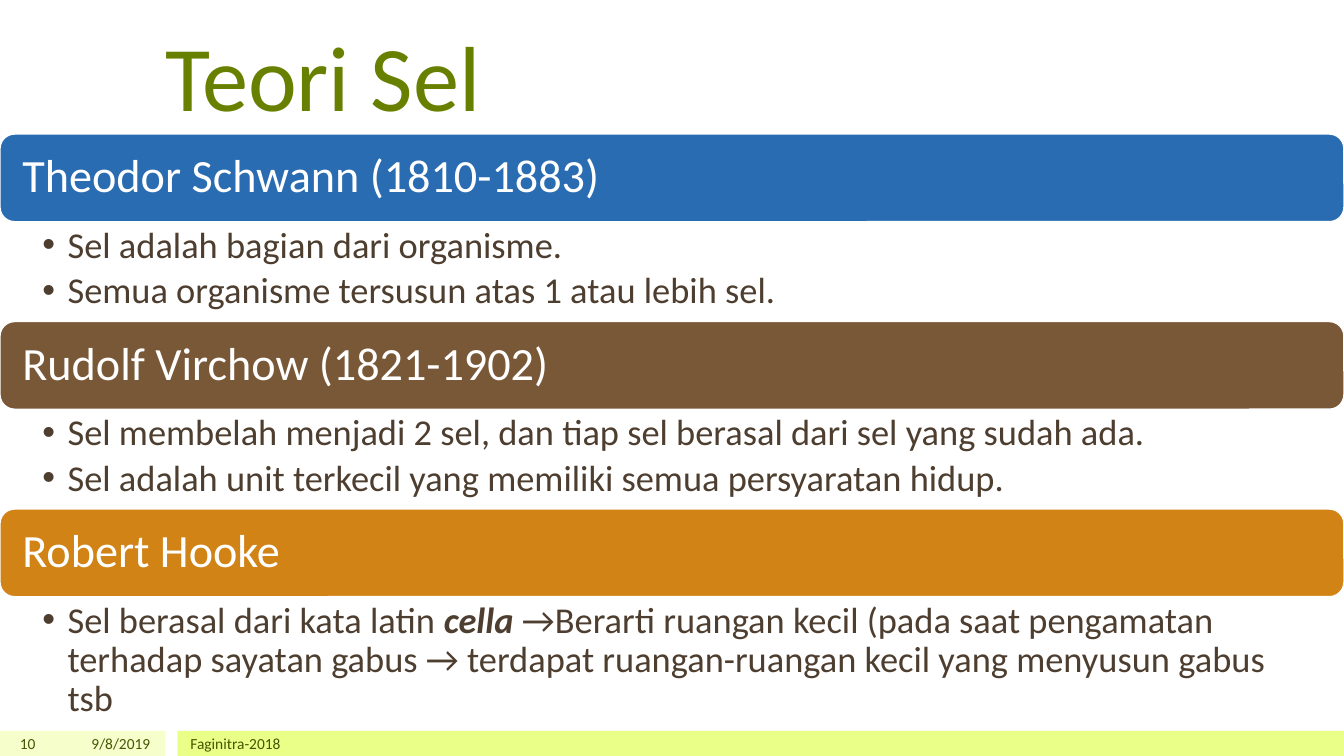
"""Build the cell theory slide with three scientists and their statements."""
from lxml.etree import SubElement
from pptx import Presentation
from pptx.dml.color import RGBColor
from pptx.enum.shapes import MSO_SHAPE
from pptx.enum.text import MSO_ANCHOR, MSO_AUTO_SIZE, PP_ALIGN
from pptx.oxml.ns import qn
from pptx.util import Inches, Pt

SCIENTISTS = [
    ("Theodor Schwann (1810-1883)", "2A6CB2", 0.99, [
        ["Sel adalah bagian dari organisme."],
        ["Semua organisme tersusun atas 1 atau lebih sel."],
    ]),
    ("Rudolf Virchow (1821-1902)", "795837", 0.99, [
        ["Sel membelah menjadi 2 sel, dan tiap sel berasal dari sel yang sudah ada."],
        ["Sel adalah unit terkecil yang memiliki semua persyaratan hidup."],
    ]),
    ("Robert Hooke", "D18316", 1.31, [
        ["Sel berasal dari kata latin ", "cella ",
         "→Berarti ruangan kecil (pada saat pengamatan terhadap sayatan gabus "
         "→ terdapat ruangan-ruangan kecil yang menyusun gabus tsb"],
    ]),
]
FOOTER_BARS = [(0, 1.64, "F6FFCC"), (1.76, 11.57, "E9FF88")]
FOOTER_TEXTS = [
    ("9/8/2019", 0.5, 1.09, PP_ALIGN.RIGHT),
    ("Faginitra-2018", 1.79, 10, PP_ALIGN.LEFT),
    ("10", 0, 0.45, PP_ALIGN.RIGHT),
]
SLIDE_WIDTH = 13.33
HEADER_HEIGHT = 0.87
FOOTER_TOP, FOOTER_HEIGHT = 7.25, 0.25


def colour(hex_string):
    return RGBColor.from_string(hex_string)


class SlideBuilder:
    font_name = "Calibri"
    title_colour = "688000"
    body_colour = "4D3E2F"
    footer_colour = "455500"

    def __init__(self, slide):
        self.slide = slide

    def place(self, shape, left, top, width, height):
        shape.left, shape.top = Inches(left), Inches(top)
        shape.width, shape.height = Inches(width), Inches(height)

    def frame(self, shape, anchor, left=0.1, top=0.05, right=0.1, bottom=0.05):
        text_frame = shape.text_frame
        text_frame.word_wrap = True
        text_frame.auto_size = MSO_AUTO_SIZE.NONE
        text_frame.vertical_anchor = anchor
        text_frame.margin_left, text_frame.margin_right = Inches(left), Inches(right)
        text_frame.margin_top, text_frame.margin_bottom = Inches(top), Inches(bottom)
        return text_frame

    def format_runs(self, paragraph, size, hex_string):
        for run in paragraph.runs:
            run.font.name = self.font_name
            run.font.size = Pt(size)
            run.font.color.rgb = colour(hex_string)

    def single_line(self, text_frame, text, size, hex_string, alignment=PP_ALIGN.LEFT):
        text_frame.text = text
        paragraph = text_frame.paragraphs[0]
        paragraph.alignment = alignment
        self.format_runs(paragraph, size, hex_string)
        return paragraph

    def title(self, text):
        shape = self.slide.shapes.title
        self.place(shape, 1.54, 0, 10.25, 1.29)
        text_frame = self.frame(shape, MSO_ANCHOR.BOTTOM, bottom=0)
        self.single_line(text_frame, text, 66, self.title_colour)

    def bar(self, kind, left, top, width, height, fill):
        shape = self.slide.shapes.add_shape(
            kind, Inches(left), Inches(top), Inches(width), Inches(height))
        shape.shadow.inherit = False
        shape.fill.solid()
        shape.fill.fore_color.rgb = colour(fill)
        shape.line.fill.background()
        return shape

    def header(self, text, top, fill):
        shape = self.bar(MSO_SHAPE.ROUNDED_RECTANGLE, 0, top, SLIDE_WIDTH, HEADER_HEIGHT, fill)
        shape.line.color.rgb = colour("FFFFFF")
        shape.line.width = Pt(1)
        text_frame = self.frame(shape, MSO_ANCHOR.MIDDLE, left=0.18, right=0.18)
        self.single_line(text_frame, text, 33, "FFFFFF").line_spacing = 0.9

    def bullets(self, placeholder, statements, top, height):
        self.place(placeholder, 0, top, SLIDE_WIDTH, height)
        text_frame = self.frame(placeholder, MSO_ANCHOR.TOP, left=0.42, right=0.26)
        for index, parts in enumerate(statements):
            paragraph = text_frame.paragraphs[0] if index == 0 else text_frame.add_paragraph()
            properties = paragraph._p.get_or_add_pPr()
            properties.set("marL", str(Inches(0.25)))
            properties.set("indent", str(-Inches(0.25)))
            SubElement(properties, qn("a:buChar")).set("char", "•")
            paragraph.alignment = PP_ALIGN.LEFT
            paragraph.line_spacing = 0.9
            paragraph.space_before = Pt(0)
            paragraph.space_after = Pt(4.5)
            for position, part in enumerate(parts):
                run = paragraph.add_run()
                run.text = part
                run.font.bold = run.font.italic = position % 2 == 1
            self.format_runs(paragraph, 26, self.body_colour)

    def footer_text(self, text, left, width, alignment):
        shape = self.slide.shapes.add_textbox(
            Inches(left), Inches(FOOTER_TOP), Inches(width), Inches(FOOTER_HEIGHT))
        text_frame = self.frame(shape, MSO_ANCHOR.MIDDLE)
        self.single_line(text_frame, text, 11, self.footer_colour, alignment)


def main():
    presentation = Presentation()
    presentation.slide_width, presentation.slide_height = Inches(SLIDE_WIDTH), Inches(7.5)
    slide = presentation.slides.add_slide(presentation.slide_layouts.get_by_name("Comparison"))
    builder = SlideBuilder(slide)
    builder.title("Teori Sel")

    for left, width, fill in FOOTER_BARS:
        builder.bar(MSO_SHAPE.RECTANGLE, left, FOOTER_TOP, width, FOOTER_HEIGHT, fill)

    title, *bodies = list(slide.placeholders)
    top = 1.33
    for (name, fill, list_height, statements), body in zip(SCIENTISTS, bodies):
        builder.header(name, top, fill)
        builder.bullets(body, statements, top + HEADER_HEIGHT, list_height)
        top += HEADER_HEIGHT + list_height
    for unused in bodies[len(SCIENTISTS):]:
        unused.element.getparent().remove(unused.element)

    for footer in FOOTER_TEXTS:
        builder.footer_text(*footer)
    presentation.save("out.pptx")


if __name__ == "__main__":
    main()
